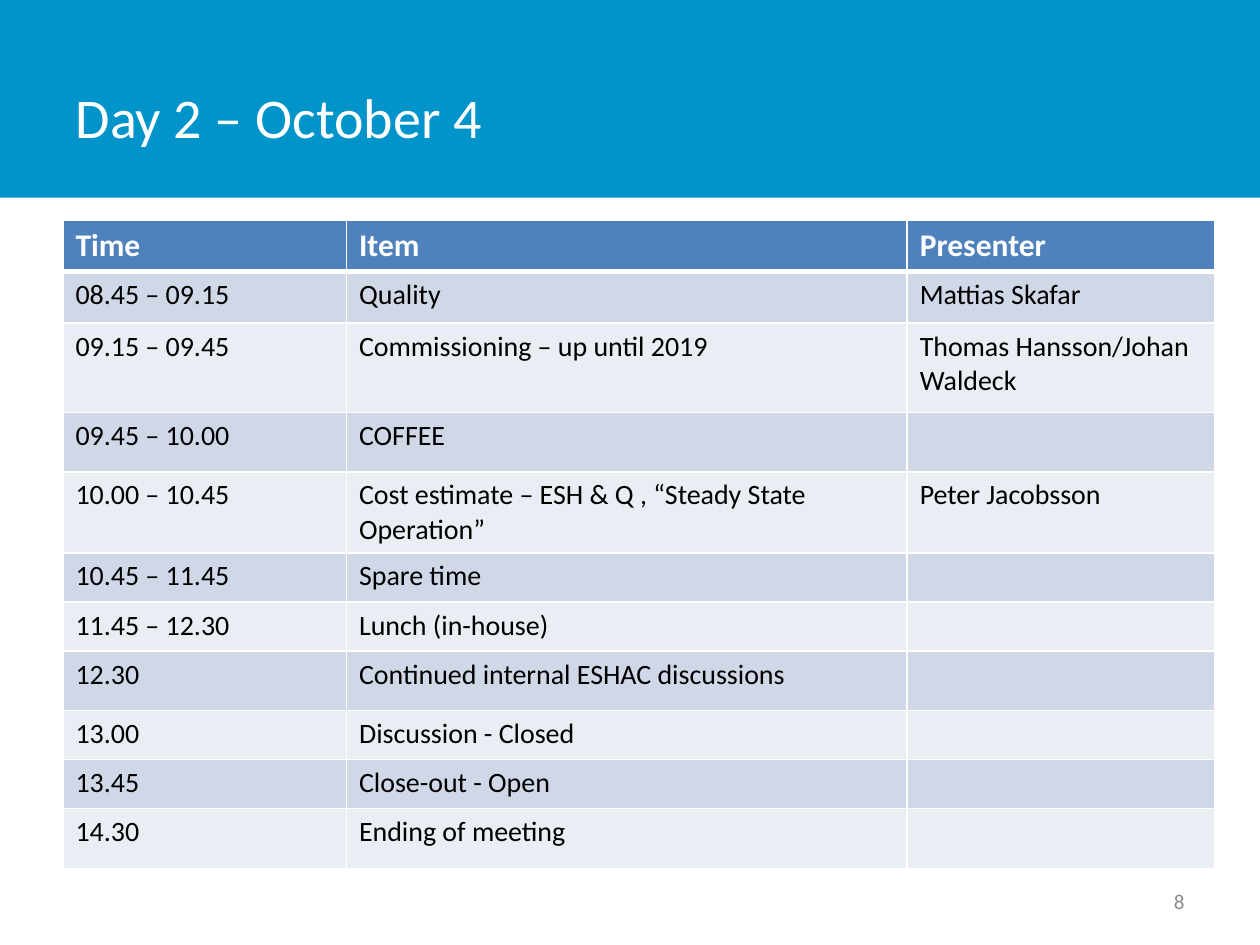
from lxml.etree import SubElement
from pptx import Presentation
from pptx.dml.color import RGBColor
from pptx.enum.shapes import MSO_SHAPE as Shape
from pptx.enum.text import MSO_ANCHOR as Anchor, PP_ALIGN as Align
from pptx.oxml.ns import qn
from pptx.util import Inches, Pt

FONT = "Calibri"
WHITE = "FFFFFF"
BLACK = "000000"
BAND_BLUE = "0094CA"
HEADER_BLUE = "4F81BD"
ROW_FILLS = ["D0D8E8", "E9EDF4"]
NUMBER_GREY = "8C8C8C"

COLUMN_WIDTHS = [2.25, 4.45, 2.44]
ROW_HEIGHTS = [0.4, 0.41, 0.71, 0.47, 0.64, 0.39, 0.39, 0.47, 0.39, 0.39, 0.48]
AGENDA = [
    ("Time", "Item", "Presenter"),
    ("08.45 – 09.15", "Quality", "Mattias Skafar"),
    ("09.15 – 09.45", "Commissioning – up until 2019", "Thomas Hansson/Johan Waldeck"),
    ("09.45 – 10.00", "COFFEE", ""),
    ("10.00 – 10.45", "Cost estimate – ESH & Q , “Steady State Operation”", "Peter Jacobsson"),
    ("10.45 – 11.45", "Spare time", ""),
    ("11.45 – 12.30", "Lunch (in-house)", ""),
    ("12.30", "Continued internal ESHAC discussions", ""),
    ("13.00", "Discussion - Closed", ""),
    ("13.45", "Close-out - Open", ""),
    ("14.30", "Ending of meeting", ""),
]


def rgb(value):
    return RGBColor.from_string(value)


def place(shape, left, top, width, height):
    shape.left, shape.top = Inches(left), Inches(top)
    shape.width, shape.height = Inches(width), Inches(height)


def write(text_frame, text, size, color, bold=False, align=Align.LEFT):
    text_frame.text = text
    text_frame.word_wrap = True
    paragraph = text_frame.paragraphs[0]
    paragraph.alignment = align
    for run in paragraph.runs:
        run.font.name = FONT
        run.font.size = Pt(size)
        run.font.bold = bold
        run.font.color.rgb = rgb(color)


def add_title_band(slide):
    band = slide.shapes.add_shape(Shape.RECTANGLE, 0, 0, Inches(10), Inches(1.57))
    band.shadow.inherit = False
    band.fill.solid()
    band.fill.fore_color.rgb = rgb(BAND_BLUE)
    band.line.fill.background()
    slide.shapes.title.element.addprevious(band.element)


def set_title(slide, text):
    title = slide.shapes.title
    place(title, 0.5, 0.3, 7.81, 1.25)
    write(title.text_frame, text, 32, WHITE)
    title.text_frame.vertical_anchor = Anchor.MIDDLE


def set_borders(cell, bottom_width):
    """Give a cell white borders, 1 point wide except at the bottom."""
    properties = cell._tc.get_or_add_tcPr()
    for side, width in zip("LRTB", (1, 1, 1, bottom_width)):
        line = SubElement(properties, qn(f"a:ln{side}"), w=str(Pt(width)))
        fill = SubElement(line, qn("a:solidFill"))
        SubElement(fill, qn("a:srgbClr"), val=WHITE)


def fill_cell(cell, text, row_index):
    header = row_index == 0
    size = 18 if header else 16
    write(cell.text_frame, text, size, WHITE if header else BLACK, bold=header)
    if not text:
        paragraph = cell.text_frame.paragraphs[0]
        SubElement(paragraph._p, qn("a:endParaRPr"), sz=str(size * 100))
    set_borders(cell, 3 if header else 1)
    cell.fill.solid()
    cell.fill.fore_color.rgb = rgb(HEADER_BLUE if header else ROW_FILLS[(row_index - 1) % 2])


def add_agenda(slide):
    frame = slide.shapes.add_table(
        len(AGENDA), len(COLUMN_WIDTHS), Inches(0.5), Inches(1.75),
        Inches(sum(COLUMN_WIDTHS)), Inches(sum(ROW_HEIGHTS)))
    table = frame.table
    for column, width in zip(table.columns, COLUMN_WIDTHS):
        column.width = Inches(width)
    for row_index, (height, texts) in enumerate(zip(ROW_HEIGHTS, AGENDA)):
        row = table.rows[row_index]
        row.height = Inches(height)
        for cell, text in zip(row.cells, texts):
            fill_cell(cell, text, row_index)


def add_slide_number(slide, number):
    box = slide.shapes.add_textbox(Inches(7.17), Inches(6.95), Inches(2.33), Inches(0.4))
    write(box.text_frame, number, 12, NUMBER_GREY, align=Align.RIGHT)
    box.text_frame.vertical_anchor = Anchor.MIDDLE


def main():
    presentation = Presentation()
    presentation.slide_width = Inches(10)
    presentation.slide_height = Inches(7.5)
    slide = presentation.slides.add_slide(presentation.slide_layouts[5])
    add_title_band(slide)
    set_title(slide, "Day 2 – October 4")
    add_agenda(slide)
    add_slide_number(slide, "8")
    presentation.save("out.pptx")


if __name__ == "__main__":
    main()
